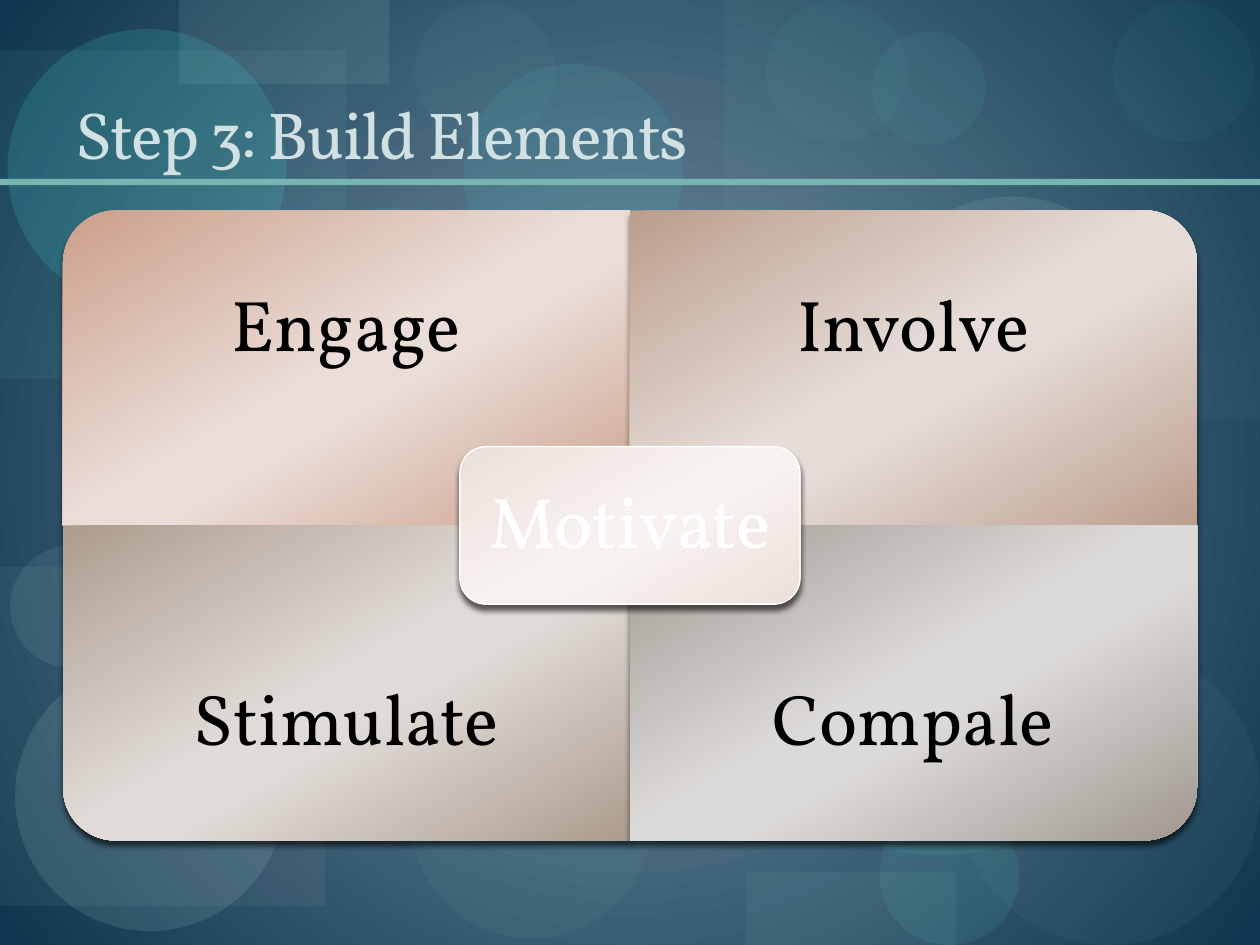
from lxml import etree
from pptx import Presentation
from pptx.dml.color import RGBColor
from pptx.enum.shapes import MSO_SHAPE
from pptx.enum.text import MSO_ANCHOR, MSO_AUTO_SIZE, PP_ALIGN
from pptx.oxml.ns import qn
from pptx.util import Inches, Pt

RECT, OVAL = MSO_SHAPE.RECTANGLE, MSO_SHAPE.OVAL
ROUND_ONE, ROUND_ALL = MSO_SHAPE.ROUND_1_RECTANGLE, MSO_SHAPE.ROUNDED_RECTANGLE
MIDDLE, BOTTOM = MSO_ANCHOR.MIDDLE, MSO_ANCHOR.BOTTOM
LEFT, CENTER = PP_ALIGN.LEFT, PP_ALIGN.CENTER
NO_FIT = MSO_AUTO_SIZE.NONE

FONT = "Vollkorn"
TITLE = "Step 3: Build Elements"
WIDTH, HEIGHT = 10, 7.5
BACKDROP = [(0, "7B96AA"), (100, "0E354D")]
DECOR = [
    (RECT, 1, 2.51, 3, 2.33, "79B5B0", 9),
    (OVAL, 3.26, 5.55, 1.92, 1.9, "549791", 13),
    (RECT, 5.75, 0, 4.25, 3.33, "79B5B0", 6),
    (RECT, 0, 4.5, 2.58, 2.69, "B2B7BA", 8),
    (OVAL, 4.57, 2.61, 2.38, 2.38, "70A39E", 8),
    (OVAL, 6.98, 6.39, 1.11, 1.11, "65E8DC", 9),
    (OVAL, 6.91, 1.56, 2.24, 2.24, "C1E8E4", 11),
    (OVAL, 0.12, 5.25, 2.14, 2.14, "C1E8E4", 12),
    (OVAL, 2.21, 5.01, 1.12, 1.12, "65E8DC", 9),
    (OVAL, 4.56, 5.06, 1.66, 1.53, "44EADC", 8),
    (RECT, 0, 0.4, 2.75, 2.61, "77D6CE", 7),
    (RECT, 1.42, 0, 1.67, 0.67, "BED7D4", 10),
    (OVAL, 0.06, 0.23, 2.21, 2.21, "44EADC", 15),
    (OVAL, 0.08, 4.33, 0.97, 0.97, "97DCD6", 10),
    (OVAL, 2.32, 1.65, 1.53, 1.53, "65E8DC", 9),
    (OVAL, 3.68, 0.51, 1.74, 1.74, "44EADC", 8),
    (OVAL, 5.68, 3.25, 3.54, 3.54, "61CDC4", 10),
    (OVAL, 6.08, 0.01, 1.12, 1.12, "65E8DC", 4),
    (OVAL, 7.6, 5.1, 2.4, 2.4, "70A39E", 8),
    (OVAL, 1.75, 4.05, 1.31, 1.31, "97DCD6", 10),
    (OVAL, 6.92, 0.25, 0.9, 0.9, "65E8DC", 6),
    (OVAL, 8.83, 0.01, 1.12, 1.12, "65E8DC", 4),
    (RECT, 5.92, 6.92, 1.67, 0.58, "79B5B0", 10),
    (OVAL, 3.29, 0.01, 1.12, 1.12, "65E8DC", 4),
    (RECT, 0, 1.42, WIDTH, 0.05, "79B5B0", 100),
]
QUADRANTS = [
    ("Engage", 0, 0, 270, "CB9F8A", "EADCD6"),
    ("Involve", 1, 0, 0, "BC9E8C", "E5DBD7"),
    ("Stimulate", 0, 1, 180, "AD9C8F", "E0DBD7"),
    ("Compale", 1, 1, 90, "A09891", "DCDAD8"),
]
HUB = ("Motivate", "ECDFDA", "F7F2F0")
GRID_LEFT, GRID_TOP, CELL_WIDTH, CELL_HEIGHT = 0.5, 1.67, 4.5, 2.5
LABEL_SHARE, HUB_WIDTH_SHARE, HUB_HEIGHT_SHARE = 0.75, 0.6, 0.5


def color(code):
    return RGBColor.from_string(code)


def child(parent, tag, **attributes):
    return etree.SubElement(parent, qn(tag), {k: str(v) for k, v in attributes.items()})


def set_gradient(owner, stops, radial=False):
    gradient = owner.find(".//" + qn("a:gradFill"))
    for part in list(gradient):
        gradient.remove(part)
    gradient.set("rotWithShape", "0")
    stop_list = child(gradient, "a:gsLst")
    for position, code in stops:
        child(child(stop_list, "a:gs", pos=position * 1000), "a:srgbClr", val=code)
    if radial:
        circle = child(gradient, "a:path", path="circle")
        child(circle, "a:fillToRect", l=50000, t=50000, r=50000, b=50000)
    else:
        child(gradient, "a:lin", ang=60 * 60000, scaled=0)


def add_shape(shapes, kind, left, top, width, height):
    shape = shapes.add_shape(kind, Inches(left), Inches(top), Inches(width), Inches(height))
    shape.shadow.inherit = False
    shape.line.fill.background()
    return shape


def add_decor(shapes, kind, left, top, width, height, code, opacity):
    shape = add_shape(shapes, kind, left, top, width, height)
    shape.fill.solid()
    shape.fill.fore_color.rgb = color(code)
    if opacity < 100:
        child(shape._element.spPr.find(".//" + qn("a:srgbClr")), "a:alpha", val=opacity * 1000)


def add_panel(shapes, kind, left, top, width, height, edge, middle):
    panel = add_shape(shapes, kind, left, top, width, height)
    panel.fill.gradient()
    set_gradient(panel._element, [(0, edge), (48, middle), (58, middle), (100, edge)])
    effects = panel._element.spPr.find(qn("a:effectLst"))
    shadow = child(effects, "a:outerShdw", blurRad=Pt(3), dist=Pt(3),
                   dir=90 * 60000, rotWithShape=0)
    child(child(shadow, "a:srgbClr", val="000000"), "a:alpha", val=60000)
    return panel


def write(box, text, size, code, align, anchor, inset):
    frame = box.text_frame
    frame.word_wrap = True
    frame.auto_size = NO_FIT
    frame.vertical_anchor = anchor
    frame.margin_left = frame.margin_right = Inches(inset)
    frame.margin_top = frame.margin_bottom = Inches(min(inset, 0.32) if inset > 0.1 else 0.05)
    para = frame.paragraphs[0]
    para.text = text
    para.alignment = align
    para.line_spacing = 0.9 if align == CENTER else 1.0
    para.font.name = FONT
    para.font.size = Pt(size)
    para.font.color.rgb = color(code)
    return para


def add_quadrant(shapes, text, column, row, turn, edge, middle):
    left = GRID_LEFT + column * CELL_WIDTH
    top = GRID_TOP + row * CELL_HEIGHT
    width, height = (CELL_HEIGHT, CELL_WIDTH) if turn % 180 else (CELL_WIDTH, CELL_HEIGHT)
    panel = add_panel(shapes, ROUND_ONE, left + (CELL_WIDTH - width) / 2,
                      top + (CELL_HEIGHT - height) / 2, width, height, edge, middle)
    panel.rotation = turn
    label_top = top + row * CELL_HEIGHT * (1 - LABEL_SHARE)
    label = shapes.add_textbox(Inches(left), Inches(label_top), Inches(CELL_WIDTH),
                               Inches(CELL_HEIGHT * LABEL_SHARE))
    write(label, text, 41, "000000", CENTER, MIDDLE, 0.32)


def add_hub(shapes, text, edge, middle):
    width, height = CELL_WIDTH * HUB_WIDTH_SHARE, CELL_HEIGHT * HUB_HEIGHT_SHARE
    hub = add_panel(shapes, ROUND_ALL, GRID_LEFT + CELL_WIDTH - width / 2,
                    GRID_TOP + CELL_HEIGHT - height / 2, width, height, edge, middle)
    hub.line.color.rgb = color("FFFFFF")
    hub.line.width = Pt(0.79)
    write(hub, text, 41, "FFFFFF", CENTER, MIDDLE, 0.15)


def main():
    deck = Presentation()
    deck.slide_width, deck.slide_height = Inches(WIDTH), Inches(HEIGHT)
    page = deck.slides.add_slide(deck.slide_layouts[5])
    page.background.fill.gradient()
    set_gradient(page._element, BACKDROP, radial=True)
    for item in DECOR:
        add_decor(page.shapes, *item)

    title = page.shapes.title
    title.left, title.top = Inches(0.5), Inches(0.17)
    title.width, title.height = Inches(9), Inches(1.25)
    para = write(title, TITLE, 38, "D1E1E3", LEFT, BOTTOM, 0.1)
    para.runs[0].font._element.set("spc", "-100")
    page.shapes._spTree.append(title._element)

    matrix = page.shapes.add_group_shape()
    for quadrant in QUADRANTS:
        add_quadrant(matrix.shapes, *quadrant)
    add_hub(matrix.shapes, *HUB)
    deck.save("out.pptx")


if __name__ == "__main__":
    main()
